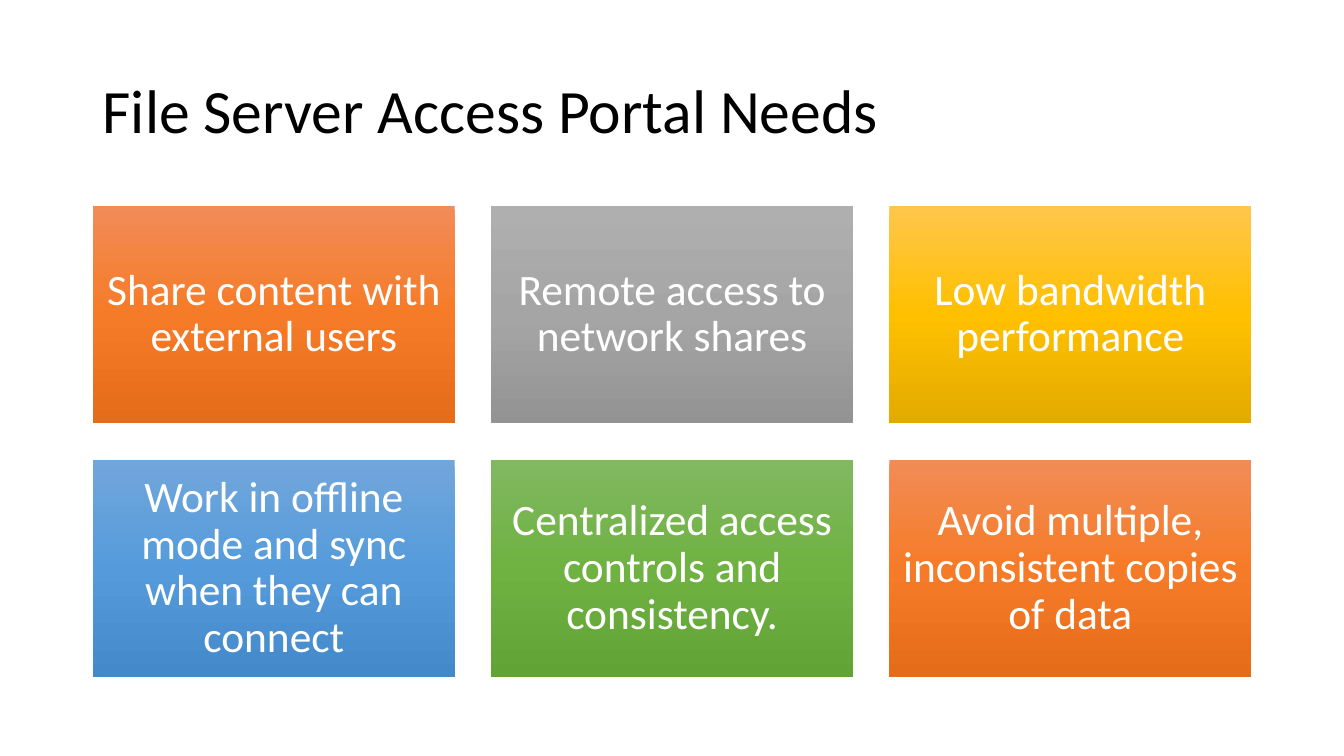
from copy import deepcopy

from pptx import Presentation
from pptx.dml.color import RGBColor
from pptx.enum.shapes import MSO_SHAPE as Shape
from pptx.enum.text import MSO_ANCHOR as Anchor, PP_ALIGN as Align
from pptx.oxml.ns import qn
from pptx.util import Inches, Pt


def rgb(code):
    return RGBColor.from_string(code)


def write(box, text, size, color, align, inset):
    frame = box.text_frame
    frame.word_wrap = True
    frame.vertical_anchor = Anchor.MIDDLE
    frame.margin_left = frame.margin_right = Inches(inset)
    frame.margin_top = frame.margin_bottom = Inches(inset)
    para = frame.paragraphs[0]
    para.alignment = align
    para.line_spacing = 0.9
    run = para.add_run()
    run.text = text
    run.font.name = "Calibri"
    run.font.size = Pt(size)
    run.font.color.rgb = rgb(color)


deck = Presentation()
deck.slide_width, deck.slide_height = Inches(13.33), Inches(7.5)
slide = deck.slides.add_slide(deck.slide_layouts[6])

# Title
title = slide.shapes.add_textbox(
    Inches(0.92), Inches(0.4), Inches(11.5), Inches(1.45))
write(title, "File Server Access Portal Needs", 44, "000000", Align.LEFT, 0.1)

# Gradient colours, top to bottom
orange = ("F18C57", "F67B28", "E56C19")
gray = ("AFAFAF", "A5A5A5", "939393")
gold = ("FFC64B", "FFC000", "E3AB00")
blue = ("71A6DB", "559BDB", "448ACA")
green = ("81B861", "6FB242", "62A336")

needs = [
    ("Share content with external users", orange),
    ("Remote access to network shares", gray),
    ("Low bandwidth performance", gold),
    ("Work in offline mode and sync when they can connect", blue),
    ("Centralized access controls and consistency.", green),
    ("Avoid multiple, inconsistent copies of data", orange),
]

# Grid of cards, three to a row
wide, high, gap = 3.59, 2.16, 0.36
for i, (text, colors) in enumerate(needs):
    row, col = divmod(i, 3)
    card = slide.shapes.add_shape(
        Shape.RECTANGLE,
        Inches(0.92 + col * (wide + gap)), Inches(2.04 + row * (high + gap)),
        Inches(wide), Inches(high))
    card.shadow.inherit = False
    card.line.fill.background()

    # The default gradient has two stops: add a third
    card.fill.gradient()
    card.fill.gradient_angle = 270
    stops = card._element.spPr.find(qn("a:gradFill")).find(qn("a:gsLst"))
    stops.append(deepcopy(stops[-1]))
    for stop, color, place in zip(card.fill.gradient_stops, colors, (0, 0.5, 1)):
        stop.color.rgb = rgb(color)
        stop.position = place

    write(card, text, 31, "FFFFFF", Align.CENTER, 0.13)

deck.save("out.pptx")
